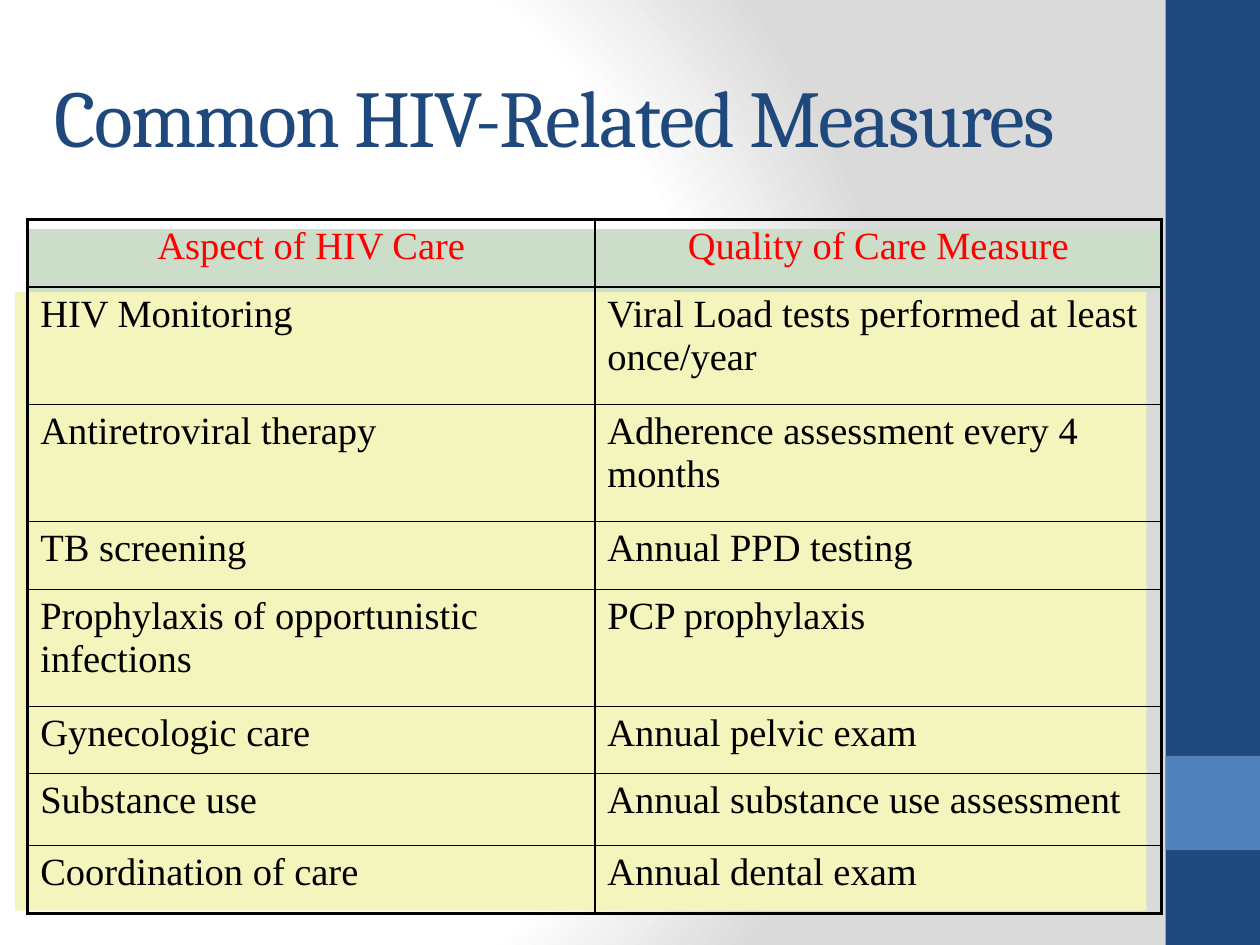
from collections import namedtuple
from dataclasses import dataclass

from lxml import etree
from pptx import Presentation
from pptx.dml.color import RGBColor
from pptx.enum import shapes, text
from pptx.oxml import ns
from pptx.util import Cm, Pt

Box = namedtuple("Box", "left top width height")


@dataclass(frozen=True)
class Theme:
    """Colours, fonts and sizes of the slide."""
    navy: str = "1F497D"
    blue: str = "4F81BD"
    green: str = "CCDEC9"
    yellow: str = "F4F4BD"
    red: str = "FF0000"
    black: str = "000000"
    white: str = "FFFFFF"
    grey: str = "DADADA"
    heading_font: str = "Cambria"
    body_font: str = "Times New Roman"
    heading_size: float = 46
    body_size: float = 22
    outer_line: float = 2.25
    inner_line: float = 1


THEME = Theme()
MEASURES = [
    ("Aspect of HIV Care", "Quality of Care Measure"),
    ("HIV Monitoring", "Viral Load tests performed at least once/year"),
    ("Antiretroviral therapy", "Adherence assessment every 4 months"),
    ("TB screening", "Annual PPD testing"),
    ("Prophylaxis of opportunistic infections", "PCP prophylaxis"),
    ("Gynecologic care", "Annual pelvic exam"),
    ("Substance use", "Annual substance use assessment"),
    ("Coordination of care", "Annual dental exam"),
]
ROW_HEIGHTS = [1.37, 2.36, 2.36, 1.37, 2.36, 1.35, 1.45, 1.37]


def add_child(parent, tag, **attributes):
    """Append a DrawingML element with the given attributes."""
    child = etree.SubElement(parent, ns.qn(f"a:{tag}"))
    for key, value in attributes.items():
        child.set(key, str(value))
    return child


def write(frame, wording, *, font, size, color, align=text.PP_ALIGN.LEFT,
          spacing=None, before=None):
    """Write one formatted paragraph into a text frame."""
    paragraph = frame.paragraphs[0]
    paragraph.alignment = align
    if before is not None:
        space = add_child(paragraph._p.get_or_add_pPr(), "spcBef")
        add_child(space, "spcPct", val=before * 1000)
    run = paragraph.add_run()
    run.text = wording
    run.font.name = font
    run.font.size = Pt(size)
    run.font.color.rgb = RGBColor.from_string(color)
    if spacing is not None:
        run._r.get_or_add_rPr().set("spc", str(spacing * 100))


def add_panel(slide, box, color):
    """Add a plain filled rectangle."""
    panel = slide.shapes.add_shape(shapes.MSO_SHAPE.RECTANGLE, *map(Cm, box))
    panel.shadow.inherit = False
    panel.fill.solid()
    panel.fill.fore_color.rgb = RGBColor.from_string(color)
    panel.line.fill.background()


def paint_background(slide):
    """Give the slide a circular gradient from white to grey."""
    slide.background.fill.gradient()
    gradient = slide.element.find(".//" + ns.qn("a:gradFill"))
    for child in list(gradient):
        gradient.remove(child)
    stops = add_child(gradient, "gsLst")
    for position, color in ((0, THEME.white), (75, THEME.white), (100, THEME.grey)):
        add_child(add_child(stops, "gs", pos=position * 1000), "srgbClr", val=color)
    circle = add_child(gradient, "path", path="circle")
    add_child(circle, "fillToRect", l=20000, t=50000, r=100000, b=50000)


def add_sidebar(slide, box):
    """Draw the side band with its square accent."""
    add_panel(slide, box, THEME.navy)
    accent_top = box.top + box.height * 0.8
    add_panel(slide, Box(box.left, accent_top, box.width, box.width), THEME.blue)


def add_heading(slide, box):
    """Place and fill the title placeholder."""
    heading = slide.shapes.title
    heading.left, heading.top, heading.width, heading.height = map(Cm, box)
    frame = heading.text_frame
    frame.word_wrap = True
    frame.auto_size = text.MSO_AUTO_SIZE.NONE
    frame.vertical_anchor = text.MSO_ANCHOR.MIDDLE
    write(frame, "Common HIV-Related Measures", font=THEME.heading_font,
          size=THEME.heading_size, color=THEME.navy, spacing=-1)


def set_borders(cell, outer_sides):
    """Line a cell, with heavier lines on the outer sides."""
    properties = cell._tc.get_or_add_tcPr()
    for index, side in enumerate("LRTB"):
        weight = THEME.outer_line if side in outer_sides else THEME.inner_line
        line = add_child(properties, f"ln{side}", w=Pt(weight))
        add_child(add_child(line, "solidFill"), "srgbClr", val=THEME.black)
        properties.insert(index, line)


def add_measures(slide, box):
    """Draw the colour bands and the table of measures over them."""
    add_panel(slide, Box(box.left, box.top + 0.2, box.width, 1.27), THEME.green)
    add_panel(slide, Box(box.left - 0.26, box.top + 1.47, box.width - 0.05, 12.47),
              THEME.yellow)
    last = len(MEASURES) - 1
    measures = slide.shapes.add_table(len(MEASURES), 2, *map(Cm, box)).table
    measures.first_row = measures.horz_banding = False
    for column in measures.columns:
        column.width = Cm(box.width / 2)
    for r, (pair, height) in enumerate(zip(MEASURES, ROW_HEIGHTS)):
        measures.rows[r].height = Cm(height)
        for c, wording in enumerate(pair):
            cell = measures.cell(r, c)
            cell.fill.background()
            set_borders(cell, "LR"[c] + "T" * (r == 0) + "B" * (r == last))
            write(cell.text_frame, wording, font=THEME.body_font,
                  size=THEME.body_size, before=20,
                  color=THEME.black if r else THEME.red,
                  align=text.PP_ALIGN.LEFT if r else text.PP_ALIGN.CENTER)


def main():
    """Build and save the slide."""
    deck = Presentation()
    deck.slide_width, deck.slide_height = Cm(25.4), Cm(19.05)
    slide = deck.slides.add_slide(deck.slide_layouts[5])
    paint_background(slide)
    add_sidebar(slide, Box(23.5, 0, 1.9, 19.05))
    add_heading(slide, Box(0.84, 1.27, 21.59, 2.11))
    add_measures(slide, Box(0.56, 4.42, 22.86, sum(ROW_HEIGHTS)))
    deck.save("out.pptx")


if __name__ == "__main__":
    main()
